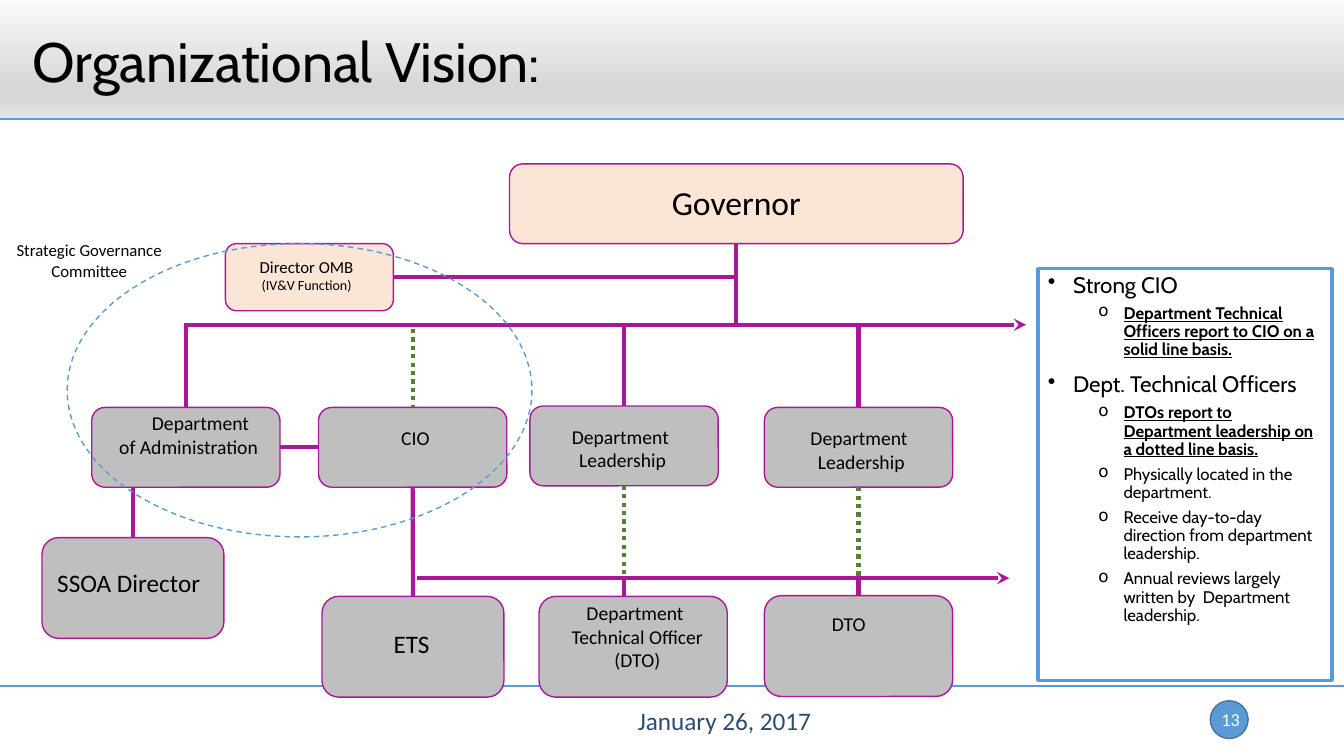
from lxml import etree
from pptx import Presentation
from pptx.dml.color import RGBColor
from pptx.enum.dml import MSO_LINE
from pptx.enum.shapes import MSO_CONNECTOR, MSO_SHAPE
from pptx.enum.text import MSO_ANCHOR, PP_ALIGN
from pptx.oxml.ns import qn
from pptx.util import Pt

RECT, ROUND, OVAL = MSO_SHAPE.RECTANGLE, MSO_SHAPE.ROUNDED_RECTANGLE, MSO_SHAPE.OVAL
STRAIGHT = MSO_CONNECTOR.STRAIGHT
DASH, DOT = MSO_LINE.DASH, MSO_LINE.ROUND_DOT
TOP, MIDDLE = MSO_ANCHOR.TOP, MSO_ANCHOR.MIDDLE
LEFT, CENTER = PP_ALIGN.LEFT, PP_ALIGN.CENTER
NORTH, WEST, SOUTH, EAST = range(4)

THEME = {
    "head": "Cabin", "body": "Calibri",
    "black": "000000", "white": "FFFFFF", "date": "2D4C75",
    "peach": "FBE5D6", "grey": "BFBFBF", "purple": "AB1799",
    "green": "548235", "blue": "5B9BD5", "navy": "43739E",
    "band": [(0, "FAFAFA"), (74, "D7D7D7"), (83, "D7D7D7"), (100, "E4E4E4")],
    "title": 39.6, "top": 24, "unit": 18, "dept": 14, "page": 13,
    "small": 12, "note": 10, "point": 16, "detail": 12,
}

TITLE = "Organizational Vision:"
DATE = "January 26, 2017"
PAGE = "13"
COMMITTEE = "Strategic Governance Committee"
SLIDE_W, SLIDE_H = 960, 540
BUS_Y, DTO_BUS_Y = 232, 413
DEPT, UNIT = (134.5, 57), (134.5, 72)
OFFICE = (130, 72)

# name: position, size, fill, text shift (right, down), lines
BOXES = {
    "governor": ((364, 117), (324, 57), "peach", (0, 13), [("Governor", "top")]),
    "omb": ((161, 174), (120, 48), "peach", (-2, 9.5),
            [("Director OMB", "small"), ("(IV&V Function)", "note")]),
    "admin": ((65.5, 291), DEPT, "grey", (2, 1),
              [("Department", "dept"), ("of Administration", "dept")]),
    "cio": ((227.5, 291), DEPT, "grey", (2, 13.5), [("CIO", "dept")]),
    "lead1": ((378.5, 290), DEPT, "grey", (-1, 13.5),
              [("Department ", "dept"), ("Leadership", "dept")]),
    "lead2": ((546, 291), DEPT, "grey", (2, 13.5),
              [("Department ", "dept"), ("Leadership", "dept")]),
    "ssoa": ((30, 384), OFFICE, "grey", (-3, 21.5), [("SSOA Director", "unit")]),
    "ets": ((230, 426), OFFICE, "grey", (-1, 23), [("ETS", "unit")]),
    "dto1": ((385, 426), UNIT, "grey", (3, 3.5),
             [("Department ", "dept"), ("Technical Officer", "dept"), ("(DTO)", "dept")]),
    "dto2": ((546, 425.5), UNIT, "grey", (-7, 11.5), [("DTO", "dept")]),
}
FIRST_LINE_INDENT = {"admin": 17}

SOLID = {"color": "purple", "width": 3}
ARROW = {**SOLID, "arrow": True}
DOTTED = {"color": "green", "width": 3, "dash": DOT}
LINKS = [
    ((131.5, BUS_Y), (733, BUS_Y), ARROW),
    ((298, DTO_BUS_Y), (721, DTO_BUS_Y), ARROW),
    (("governor", SOUTH), (526, BUS_Y), SOLID),
    (("omb", EAST), (526, 198), SOLID),
    ((132.75, BUS_Y), ("admin", NORTH), SOLID),
    ((294.75, 235), ("cio", NORTH), DOTTED),
    ((445.75, BUS_Y), ("lead1", NORTH), SOLID),
    ((613.25, BUS_Y), ("lead2", NORTH), SOLID),
    (("admin", EAST), ("cio", WEST), SOLID),
    ((95, 348), ("ssoa", NORTH), SOLID),
    (("cio", SOUTH), ("ets", NORTH), SOLID),
    (("lead1", SOUTH), (445.75, DTO_BUS_Y), DOTTED),
    (("lead2", SOUTH), (613.25, DTO_BUS_Y), DOTTED),
    ((445.75, DTO_BUS_Y), (445.75, 426), SOLID),
    ((613.25, DTO_BUS_Y), ("dto2", NORTH), SOLID),
]

POINTS = [
    ("Strong CIO", [
        ("Department Technical Officers report to CIO on a solid line basis.", True)]),
    ("Dept. Technical Officers", [
        ("DTOs report to Department leadership on a dotted line basis.", True),
        ("Physically located in the department.", False),
        ("Receive day-to-day direction from department leadership.", False),
        ("Annual reviews largely written by  Department leadership.", False)]),
]

prs = Presentation()
prs.slide_width, prs.slide_height = Pt(SLIDE_W), Pt(SLIDE_H)
s = prs.slides.add_slide(prs.slide_layouts[5])


def rgb(name):
    return RGBColor.from_string(THEME[name])


def style(obj, values):
    for key, value in values.items():
        setattr(obj, key, value)


def add_box(kind, rect, fill=None, line=None, width=1, dash=None):
    sp = s.shapes.add_shape(kind, *map(Pt, rect))
    sp.shadow.inherit = False
    if fill:
        sp.fill.solid()
        sp.fill.fore_color.rgb = rgb(fill)
    else:
        sp.fill.background()
    if line:
        sp.line.color.rgb = rgb(line)
        style(sp.line, {"width": Pt(width), "dash_style": dash})
    else:
        sp.line.fill.background()
    return sp


def write(p, text, size, color="black", font="body", align=CENTER, **extra):
    p.alignment = align
    r = p.add_run()
    r.text = text
    style(r.font, {"size": Pt(THEME[size]), "name": THEME[font], **extra})
    r.font.color.rgb = rgb(color)


def frame(sp, anchor=TOP, margins=(7.2, 3.6, 7.2, 3.6)):
    tf = sp.text_frame
    left, top, right, bottom = map(Pt, margins)
    style(tf, {"word_wrap": True, "vertical_anchor": anchor, "margin_left": left,
               "margin_top": top, "margin_right": right, "margin_bottom": bottom})
    return tf


def add_label(rect, text, *args, **extra):
    tf = frame(s.shapes.add_textbox(*map(Pt, rect)))
    write(tf.paragraphs[0], text, *args, **extra)


def paragraphs(tf, count):
    return [tf.paragraphs[0]] + [tf.add_paragraph() for _ in range(count - 1)]


def indent(p, left, first=0):
    pPr = p._p.get_or_add_pPr()
    pPr.set("marL", str(Pt(left)))
    pPr.set("indent", str(Pt(first)))
    return pPr


def spot(end):
    if end[0] not in BOXES:
        return end
    (x, y), (w, h) = BOXES[end[0]][:2]
    return [(x + w / 2, y), (x, y + h / 2), (x + w / 2, y + h), (x + w, y + h / 2)][end[1]]


def add_link(start, end, color, width, dash=None, arrow=False):
    c = s.shapes.add_connector(STRAIGHT, *map(Pt, (*spot(start), *spot(end))))
    c.line.color.rgb = rgb(color)
    style(c.line, {"width": Pt(width), "dash_style": dash})
    if arrow:
        etree.SubElement(c.line._get_or_add_ln(), qn("a:tailEnd"), type="stealth")
    etree.SubElement(c._element.spPr, qn("a:effectLst"))
    for target, join in ((start, c.begin_connect), (end, c.end_connect)):
        if target[0] in BOXES:
            join(boxes[target[0]], target[1])


band = add_box(RECT, (0, 0.5, SLIDE_W, 83.5))
band.fill.gradient()
band.fill.gradient_angle = 270
stops = band._element.spPr.find(qn("a:gradFill")).find(qn("a:gsLst"))
for stop in list(stops):
    stops.remove(stop)
for percent, color in THEME["band"]:
    stop = etree.SubElement(stops, qn("a:gs"), pos=str(percent * 1000))
    etree.SubElement(stop, qn("a:srgbClr"), val=color)
for y, width in ((85, 1.5), (490, 1.75)):
    add_link((0, y), (SLIDE_W, y), "blue", width)

title = s.shapes.title
style(title, {"left": Pt(16), "top": Pt(24), "width": Pt(864), "height": Pt(44)})
p = frame(title, MIDDLE).paragraphs[0]
write(p, TITLE, "title", font="head", align=LEFT)
p.line_spacing = 0.9
s.shapes._spTree.append(title._element)

boxes = {}
for name, (pos, size, fill, (dx, dy), lines) in BOXES.items():
    boxes[name] = sp = add_box(ROUND, (*pos, *size), fill, "purple")
    corner = 0.05 * size[1]
    tf = frame(sp, TOP, (max(0, 2 * dx), max(0, dy - corner), max(0, -2 * dx), 0))
    for p, (text, kind) in zip(paragraphs(tf, len(lines)), lines):
        write(p, text, kind)
    if name in FIRST_LINE_INDENT:
        indent(tf.paragraphs[0], FIRST_LINE_INDENT[name])
for start, end, look in LINKS:
    add_link(start, end, **look)

panel = add_box(RECT, (741.5, 192, 210, 294), None, "blue", 2.5)
rows = [row for head, details in POINTS
        for row in [(head, 0, False)] + [(text, 1, strong) for text, strong in details]]
for p, (text, level, strong) in zip(paragraphs(frame(panel), len(rows)), rows):
    write(p, text, ("point", "detail")[level], font="head", align=LEFT,
          bold=strong, underline=strong)
    style(p, {"level": level, "line_spacing": 0.9, "space_before": Pt((10, 5)[level])})
    etree.SubElement(indent(p, (18, 54)[level], -18), qn("a:buChar"), char="•o"[level])

add_box(OVAL, (48, 174, 332, 209.5), None, "blue", 1, DASH)
add_label((0, 168, 127.5, 36), COMMITTEE, "small")
add_label((448.5, 500.5, 215, 29), DATE, "unit", "date", align=LEFT)
badge = add_box(OVAL, (864.5, 500.5, 27, 27), "blue", "navy")
write(frame(badge, MIDDLE, (2, 0, 0, 0)).paragraphs[0], PAGE, "page", "white")

prs.save("out.pptx")
